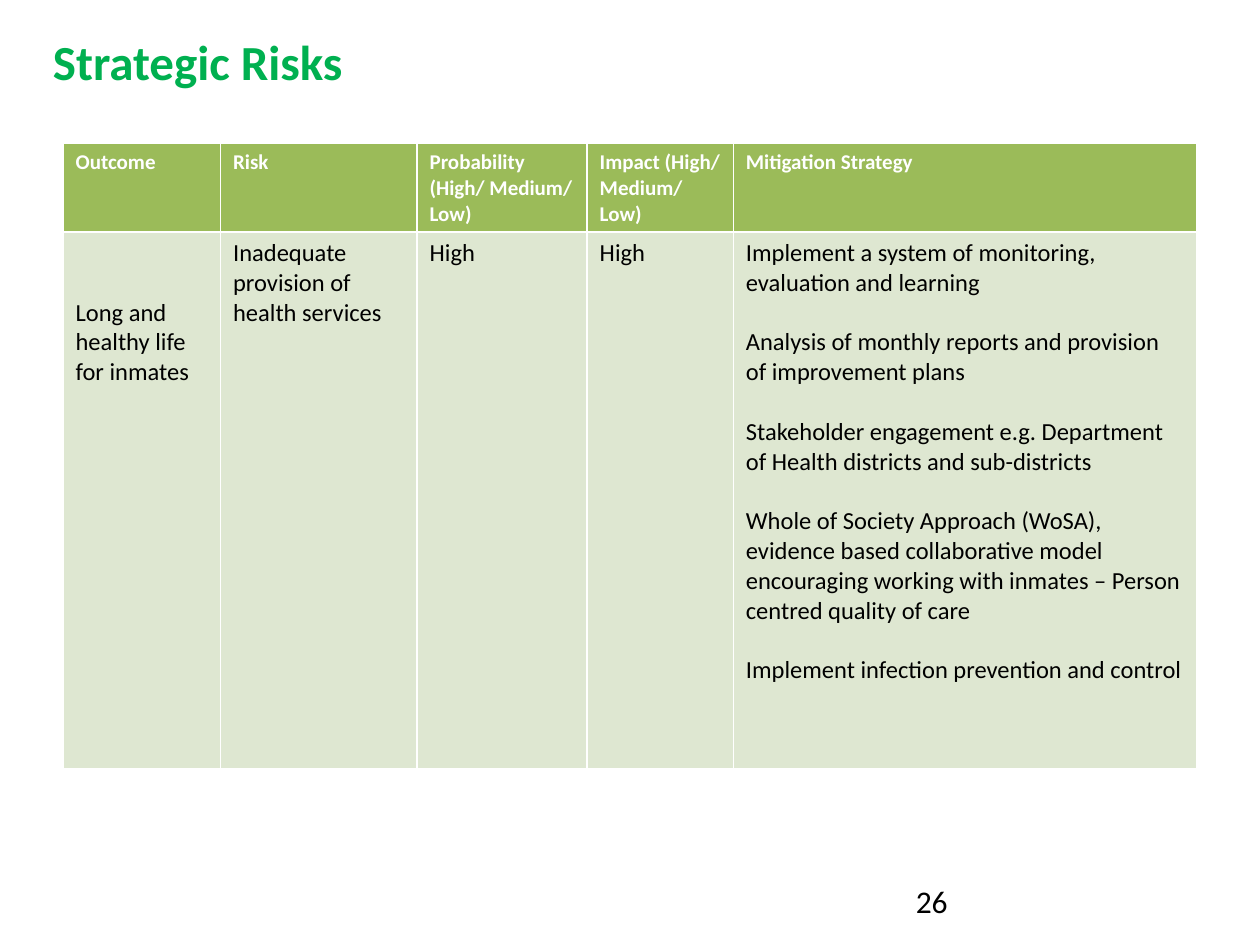
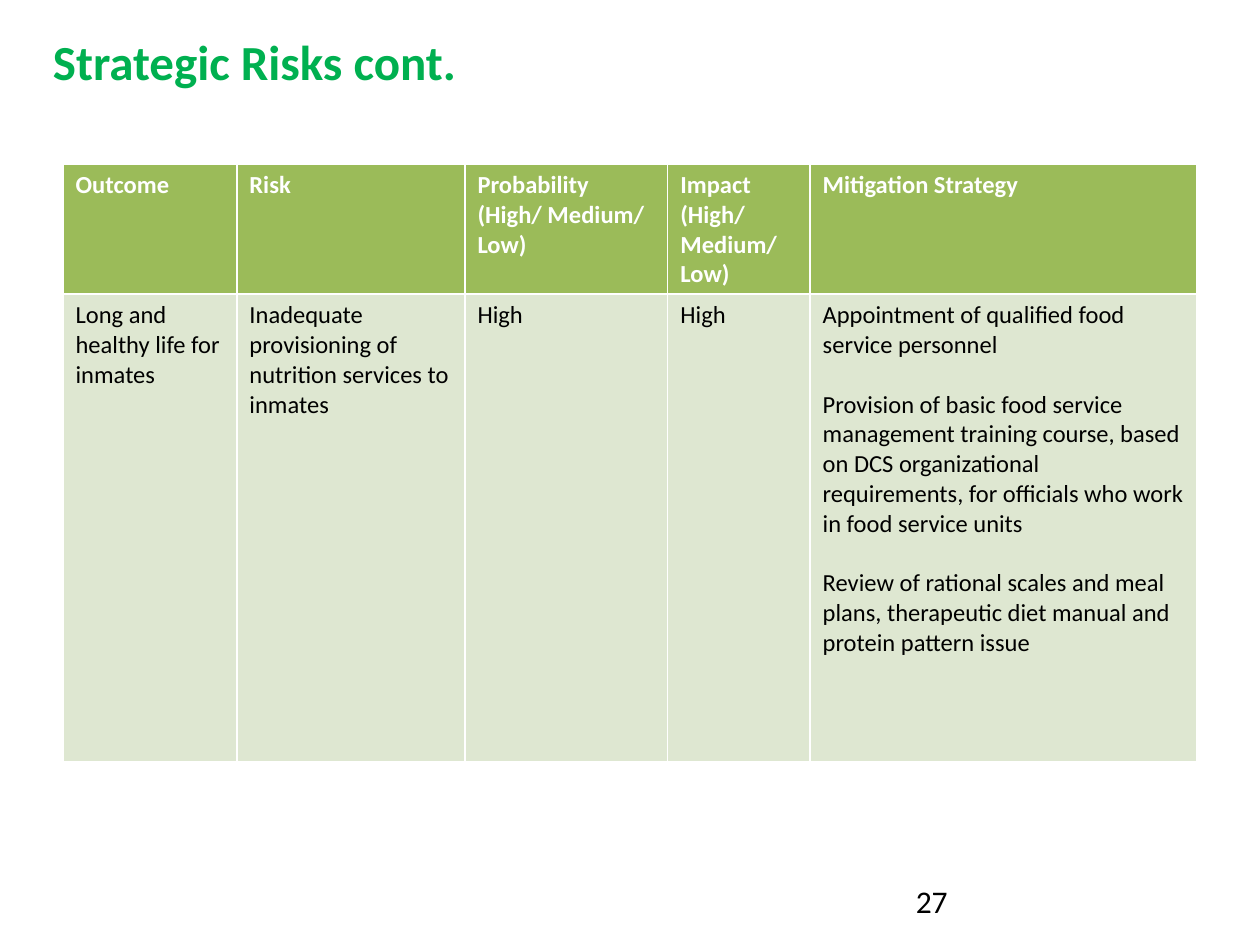
from pptx import Presentation
from pptx.dml.color import RGBColor
from pptx.enum.text import MSO_ANCHOR, MSO_AUTO_SIZE, PP_ALIGN
from pptx.util import Inches, Pt

FONT = "Calibri"
COLORS = {"title": "00B050", "head": "9BBB59", "body": "DEE7D1",
          "light": "FFFFFF", "dark": "000000"}
HEADS = ["Outcome", "Risk", "Probability (High/ Medium/ Low)",
         "Impact (High/ Medium/ Low)", "Mitigation Strategy"]
LINE = 17
RISKS = [
    {"title": "Strategic Risks", "page": "26", "box": (0.5, 1.14),
     "cols": [1.25, 1.56, 1.35, 1.16, 3.68], "rows": [0.69, 4.26],
     "size": 12, "drop": 2,
     "cells": [
         ["Long and healthy life for inmates"],
         ["Inadequate provision of health services"],
         ["High"],
         ["High"],
         ["Implement a system of monitoring, evaluation and learning",
          "Analysis of monthly reports and provision of improvement plans",
          "Stakeholder engagement e.g. Department of Health districts and sub-districts",
          "Whole of Society Approach (WoSA), evidence based collaborative model "
          "encouraging working with inmates – Person centred quality of care",
          "Implement infection prevention and control"]]},
    {"title": "Strategic Risks cont.", "page": "27", "box": (0.5, 1.3),
     "cols": [1.38, 1.81, 1.61, 1.13, 3.07], "rows": [1.03, 3.71],
     "size": 14, "drop": 0,
     "cells": [
         ["Long and healthy life for inmates"],
         ["Inadequate provisioning of nutrition services to inmates"],
         ["High"],
         ["High"],
         ["Appointment of qualified food service personnel",
          "Provision of basic food service management training course, based on DCS "
          "organizational requirements, for officials who work in food service units",
          "Review of rational scales and meal plans, therapeutic diet manual and "
          "protein pattern issue"]]},
]


def write(frame, lines, size=14, color="dark", bold=False, gap=0):
    frame.word_wrap = True
    for i, line in enumerate(lines):
        para = frame.paragraphs[0] if i == 0 else frame.add_paragraph()
        para.alignment = PP_ALIGN.LEFT
        para.space_before = Pt(gap if i else 0)
        run = para.add_run()
        run.text = line
        font = run.font
        font.name, font.size, font.bold = FONT, Pt(size), bold
        font.color.rgb = RGBColor.from_string(COLORS[color])


def add_title(slide, text, left, top, width, height):
    title = slide.shapes.title
    title.left, title.top = Inches(left), Inches(top)
    title.width, title.height = Inches(width), Inches(height)
    frame = title.text_frame
    frame.auto_size = MSO_AUTO_SIZE.SHAPE_TO_FIT_TEXT
    frame.vertical_anchor = MSO_ANCHOR.TOP
    write(frame, [text], size=28, color="title", bold=True)


def add_page(slide, text, left, top, width, height):
    box = slide.shapes.add_textbox(*map(Inches, (left, top, width, height)))
    write(box.text_frame, [text], size=18)


def paint(cell, color):
    cell.fill.solid()
    cell.fill.fore_color.rgb = RGBColor.from_string(COLORS[color])


def add_grid(slide, risk, left, top):
    cols, rows = risk["cols"], risk["rows"]
    size = map(Inches, (left, top, sum(cols), sum(rows)))
    grid = slide.shapes.add_table(len(rows), len(cols), *size).table
    grid.horz_banding = False
    for row, height in zip(grid.rows, rows):
        row.height = Inches(height)
    for i, width in enumerate(cols):
        grid.columns[i].width = Inches(width)
        head, body = grid.cell(0, i), grid.cell(1, i)
        paint(head, "head")
        paint(body, "body")
        write(head.text_frame, [HEADS[i]], size=risk["size"], color="light", bold=True)
        write(body.text_frame, risk["cells"][i], gap=LINE)
    grid.cell(1, 0).margin_top = Inches(0.05) + Pt(LINE * risk["drop"])


def add_risk(deck, risk):
    slide = deck.slides.add_slide(deck.slide_layouts[5])
    add_title(slide, risk["title"], 0.32, 0.2, 9.45, 0.57)
    add_grid(slide, risk, *risk["box"])
    add_page(slide, risk["page"], 7.17, 6.95, 2.33, 0.4)


def main():
    deck = Presentation()
    deck.slide_width, deck.slide_height = Inches(10), Inches(7.5)
    for risk in RISKS:
        add_risk(deck, risk)
    deck.save("out.pptx")


if __name__ == "__main__":
    main()
